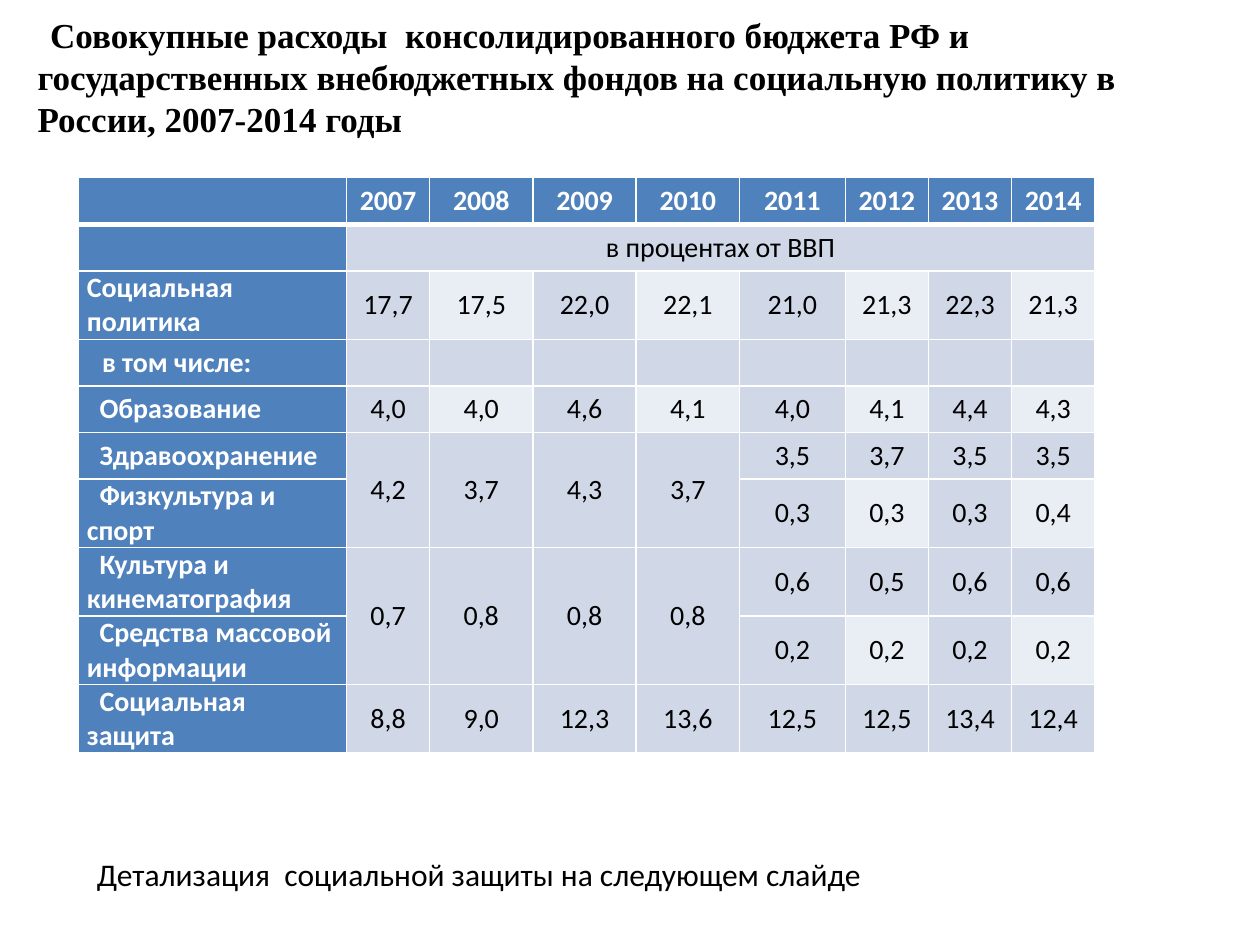
from dataclasses import dataclass

from lxml import etree
from pptx import Presentation
from pptx import util as u
from pptx.dml.color import RGBColor
from pptx.enum import shapes, text
from pptx.oxml import ns


@dataclass(frozen=True)
class Theme:
    head: str = "4F81BD"
    band: str = "D0D8E8"
    pale: str = "E9EDF4"
    white: str = "FFFFFF"
    black: str = "000000"
    serif: str = "Times New Roman"
    sans: str = "Calibri"
    title: int = 20
    note: int = 18
    cell: int = 16


TITLE = ("Совокупные расходы  консолидированного бюджета РФ и государственных "
         "внебюджетных фондов на социальную политику в России, 2007-2014 годы")
NOTE = "Детализация  социальной защиты на следующем слайде"
WIDTHS = [2.13, 0.66, 0.82, 0.82, 0.82, 0.84, 0.66, 0.66, 0.66]
ROWS = [
    ["", *map(str, range(2007, 2015))],
    ["", "в процентах от ВВП"],
    ["Социальная политика", "17,7", "17,5", "22,0", "22,1", "21,0", "21,3", "22,3", "21,3"],
    ["в том числе:"],
    ["Образование", "4,0", "4,0", "4,6", "4,1", "4,0", "4,1", "4,4", "4,3"],
    ["Здравоохранение", "4,2", "3,7", "4,3", "3,7", "3,5", "3,7", "3,5", "3,5"],
    ["Физкультура и спорт", "", "", "", "", "0,3", "0,3", "0,3", "0,4"],
    ["Культура и кинематография", "0,7", "0,8", "0,8", "0,8", "0,6", "0,5", "0,6", "0,6"],
    ["Средства массовой информации", "", "", "", "", "0,2", "0,2", "0,2", "0,2"],
    ["Социальная защита", "8,8", "9,0", "12,3", "13,6", "12,5", "12,5", "13,4", "12,4"],
]
INDENTS = {0: 0, 2: 0, 3: 0.12}
MERGES = [(1, 1, 1, 8)] + [(row, col, row + 1, col) for row in (5, 7) for col in range(1, 5)]


class Deck:
    """Holds the theme and the current slide and draws each kind of element."""

    def __init__(self, theme):
        self.theme = theme
        self.file = Presentation()
        self.file.slide_width, self.file.slide_height = u.Inches(10), u.Inches(7.5)
        self.slide = self.file.slides.add_slide(self.file.slide_layouts[6])

    def label(self, frame, words, size, color, bold=False, face=None, align="LEFT", indent=0):
        frame.text = words
        para = frame.paragraphs[0]
        para.alignment = getattr(text.PP_ALIGN, align)
        if indent:
            props = para._p.get_or_add_pPr()
            props.set("marL", "0")
            props.set("indent", str(u.Inches(indent)))
        for run in para.runs:
            font = run.font
            font.name, font.size, font.bold = face or self.theme.sans, u.Pt(size), bold
            font.color.rgb = RGBColor.from_string(color)

    def title(self, words, box):
        shape = self.slide.shapes.add_shape(shapes.MSO_SHAPE.RECTANGLE, *map(u.Inches, box))
        shape.shadow.inherit = False
        shape.fill.solid()
        shape.fill.fore_color.rgb = RGBColor.from_string(self.theme.white)
        shape.line.fill.background()
        frame = shape.text_frame
        frame.word_wrap = True
        frame.vertical_anchor = text.MSO_ANCHOR.MIDDLE
        self.label(frame, words, self.theme.title, self.theme.black, True,
                   self.theme.serif, indent=0.1)

    def note(self, words, box):
        frame = self.slide.shapes.add_textbox(*map(u.Inches, box)).text_frame
        frame.word_wrap = False
        self.label(frame, words, self.theme.note, self.theme.black)

    def border(self, cell, row):
        props = cell._tc.get_or_add_tcPr()
        for side in "LRTB":
            thick = (row, side) in ((0, "B"), (1, "T"))
            line = etree.SubElement(props, ns.qn(f"a:ln{side}"), w=str(u.Pt(3 if thick else 1)))
            fill = etree.SubElement(line, ns.qn("a:solidFill"))
            etree.SubElement(fill, ns.qn("a:srgbClr"), val=self.theme.white)

    def cell(self, cell, row, col, words):
        theme = self.theme
        head = row == 0 or col == 0
        pale = row > 1 and row % 2 == 0 and col % 2 == 0
        cell.margin_left = cell.margin_right = u.Inches(0.07)
        cell.margin_top = cell.margin_bottom = 0
        cell.vertical_anchor = text.MSO_ANCHOR.MIDDLE
        self.border(cell, row)
        cell.fill.solid()
        cell.fill.fore_color.rgb = RGBColor.from_string(
            theme.head if head else theme.pale if pale else theme.band)
        self.label(cell.text_frame, words, theme.cell, theme.white if head else theme.black,
                   head, align="CENTER" if col else "LEFT",
                   indent=0 if col else INDENTS.get(row, 0.1))

    def table(self, rows, widths, left, top, height):
        grid = self.slide.shapes.add_table(
            len(rows), len(widths), u.Inches(left), u.Inches(top),
            u.Inches(sum(widths)), u.Inches(height * len(rows))).table
        for col, width in enumerate(widths):
            grid.columns[col].width = u.Inches(width)
        for row, words in enumerate(rows):
            grid.rows[row].height = u.Inches(height)
            for col in range(len(widths)):
                self.cell(grid.cell(row, col), row, col, words[col] if col < len(words) else "")
        for top_row, first, low_row, last in MERGES:
            grid.cell(top_row, first).merge(grid.cell(low_row, last))


def main():
    deck = Deck(Theme())
    deck.table(ROWS, WIDTHS, 0.62, 1.41, 0.37)
    deck.title(TITLE, (0.2, 0.05, 9.69, 1.11))
    deck.note(NOTE, (0.67, 6.74, 6.33, 0.4))
    deck.file.save("out.pptx")


if __name__ == "__main__":
    main()
